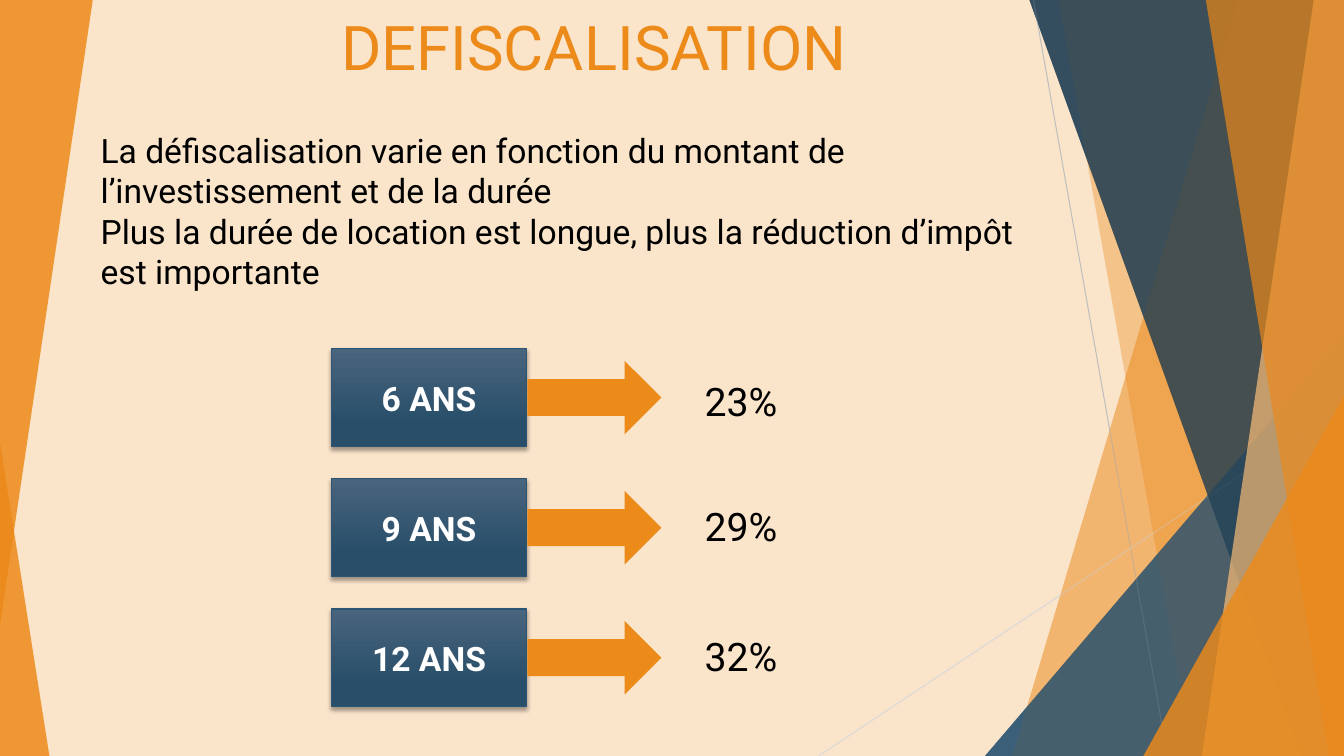
from lxml import etree
from pptx import Presentation
from pptx.dml.color import RGBColor
from pptx.enum.shapes import MSO_CONNECTOR, MSO_SHAPE
from pptx.enum.text import MSO_ANCHOR, MSO_AUTO_SIZE, PP_ALIGN
from pptx.oxml.ns import qn
from pptx.util import Inches, Pt

RECTANGLE = MSO_SHAPE.RECTANGLE
TRIANGLE = MSO_SHAPE.ISOSCELES_TRIANGLE
RIGHT_ARROW = MSO_SHAPE.RIGHT_ARROW
STRAIGHT = MSO_CONNECTOR.STRAIGHT
TOP, MIDDLE, BOTTOM = MSO_ANCHOR.TOP, MSO_ANCHOR.MIDDLE, MSO_ANCHOR.BOTTOM
LEFT, CENTER = PP_ALIGN.LEFT, PP_ALIGN.CENTER
GROW = MSO_AUTO_SIZE.SHAPE_TO_FIT_TEXT

WIDTH, HEIGHT = 13.33, 7.5
FONT = "Roboto"
ORANGE, PALE_ORANGE, CREAM = "EC8A1A", "F4B976", "FAE4CA"
BLUE, DARK_BLUE = "2C5573", "214056"
BLACK, WHITE = "000000", "FFFFFF"

PARAGRAPHS = [
    "La défiscalisation varie en fonction du montant de l’investissement et de la durée",
    "Plus la durée de location est longue, plus la réduction d’impôt est importante",
]
# Duration, tax reduction, drop of the percentage below the top of its row
RATES = [("6 ANS", "23%", 0.23), ("9 ANS", "29%", 0.18), ("12 ANS", "32%", 0.18)]


def color(hex_value):
    return RGBColor.from_string(hex_value)


def fill_plain(shape, hex_value, opacity=100):
    shape.shadow.inherit = False
    shape.line.fill.background()
    shape.fill.solid()
    shape.fill.fore_color.rgb = color(hex_value)
    if opacity < 100:
        srgb = shape.fill._xPr.find(".//" + qn("a:srgbClr"))
        etree.SubElement(srgb, qn("a:alpha"), val=str(opacity * 1000))


def add_preset(slide, preset, left, top, width, height):
    return slide.shapes.add_shape(
        preset, Inches(left), Inches(top), Inches(width), Inches(height))


def write(shape, lines, size, hex_value, align=LEFT, anchor=TOP, bold=False):
    frame = shape.text_frame
    frame.word_wrap = True
    frame.vertical_anchor = anchor
    frame.text = "\n".join(lines)
    for paragraph in frame.paragraphs:
        paragraph.alignment = align
        font = paragraph.runs[0].font
        font.name, font.size, font.bold = FONT, Pt(size), bold
        font.color.rgb = color(hex_value)


def add_text(slide, left, top, width, height, lines, size, hex_value, **layout):
    box = slide.shapes.add_textbox(
        Inches(left), Inches(top), Inches(width), Inches(height))
    write(box, lines, size, hex_value, **layout)
    return box


# Background facets
def add_band(slide, top_x, bottom_x, hex_value, opacity):
    """Full-height facet from a slanted left edge to the slide's right edge."""
    builder = slide.shapes.build_freeform(Inches(top_x), 0)
    corners = [(WIDTH, 0), (WIDTH, HEIGHT), (bottom_x, HEIGHT)]
    builder.add_line_segments([(Inches(x), Inches(y)) for x, y in corners])
    fill_plain(builder.convert_to_shape(), hex_value, opacity)


def add_corner(slide, left, top, width, height, hex_value, opacity, apex=1, rotation=0):
    corner = add_preset(slide, TRIANGLE, left, top, width, height)
    corner.adjustments[0] = apex
    corner.rotation = rotation
    fill_plain(corner, hex_value, opacity)


def add_right_facets(slide):
    add_band(slide, 12.28, 10.04, ORANGE, 30)
    add_band(slide, 10.5, 11.83, ORANGE, 20)
    add_corner(slide, 9.77, 3.33, 3.56, 4.17, BLUE, 72)
    add_band(slide, 10.21, 12.91, DARK_BLUE, 70)
    add_band(slide, 13.03, 11.92, PALE_ORANGE, 70)
    add_band(slide, 11.96, 13.18, ORANGE, 65)
    add_corner(slide, 11.34, 3.93, 1.99, 3.57, ORANGE, 80)


def add_thin_line(slide, x1, y1, x2, y2, hex_value):
    line = slide.shapes.add_connector(
        STRAIGHT, Inches(x1), Inches(y1), Inches(x2), Inches(y2))
    line.line.color.rgb = color(hex_value)
    line.line.width = Pt(0.75)
    etree.SubElement(line._element.spPr, qn("a:effectLst"))


def add_background(slide):
    slide.background.fill.solid()
    slide.background.fill.fore_color.rgb = color(CREAM)
    add_right_facets(slide)
    add_corner(slide, 0, 4.39, 0.49, 3.11, ORANGE, 85, apex=0)
    add_thin_line(slide, 10.25, 0, 11.58, HEIGHT, "BFBFBF")
    add_thin_line(slide, WIDTH, 4.03, 8.12, HEIGHT, "D9D9D9")
    add_right_facets(slide)
    add_corner(slide, 0, 0, 0.92, 6.2, ORANGE, 85, rotation=180)


# Duration box with gradient and soft shadow
def add_duration(slide, left, top, width, height, duration):
    box = add_preset(slide, RECTANGLE, left, top, width, height)
    box.fill.gradient()
    box.fill.gradient_angle = 270
    stops = [(0, "49647D"), (0.78, "284E69")]
    for stop, (position, hex_value) in zip(box.fill.gradient_stops, stops):
        stop.position = position
        stop.color.rgb = color(hex_value)
    box.line.color.rgb = color(BLUE)
    box.line.width = Pt(1)
    box.shadow.inherit = False
    effects = box._element.spPr.find(qn("a:effectLst"))
    shadow = etree.SubElement(
        effects, qn("a:outerShdw"), blurRad=str(Pt(3)), dist=str(Pt(2)),
        dir="5400000", rotWithShape="0")
    shade = etree.SubElement(shadow, qn("a:srgbClr"), val=BLACK)
    etree.SubElement(shade, qn("a:alpha"), val="35000")
    write(box, [duration], 24, WHITE, align=CENTER, anchor=MIDDLE, bold=True)


# One row: duration, arrow, tax reduction
def add_rate(slide, left, top, duration, reduction, drop):
    add_duration(slide, left, top, 1.93, 0.97, duration)
    arrow = add_preset(slide, RIGHT_ARROW, left + 1.94, top + 0.12, 1.33, 0.73)
    fill_plain(arrow, ORANGE)
    percentage = add_text(
        slide, left + 3.6, top + drop, 2.4, 0.57, [reduction], 28, BLACK)
    percentage.text_frame.auto_size = GROW


def add_rates(slide, left, top, pitch):
    for row, rate in enumerate(RATES):
        add_rate(slide, left, top + row * pitch, *rate)


def main():
    deck = Presentation()
    deck.slide_width, deck.slide_height = Inches(WIDTH), Inches(HEIGHT)
    slide = deck.slides.add_slide(deck.slide_layouts[6])
    add_background(slide)
    add_text(slide, 1.65, 0, 8.49, 0.87, ["DEFISCALISATION"], 44, ORANGE,
             align=CENTER, anchor=BOTTOM)
    explanation = add_text(slide, 0.9, 1.24, 9.67, 1.72, PARAGRAPHS, 24, BLACK)
    explanation.text_frame.auto_size = GROW
    add_rates(slide, 3.29, 3.46, 1.29)
    deck.save("out.pptx")


if __name__ == "__main__":
    main()
